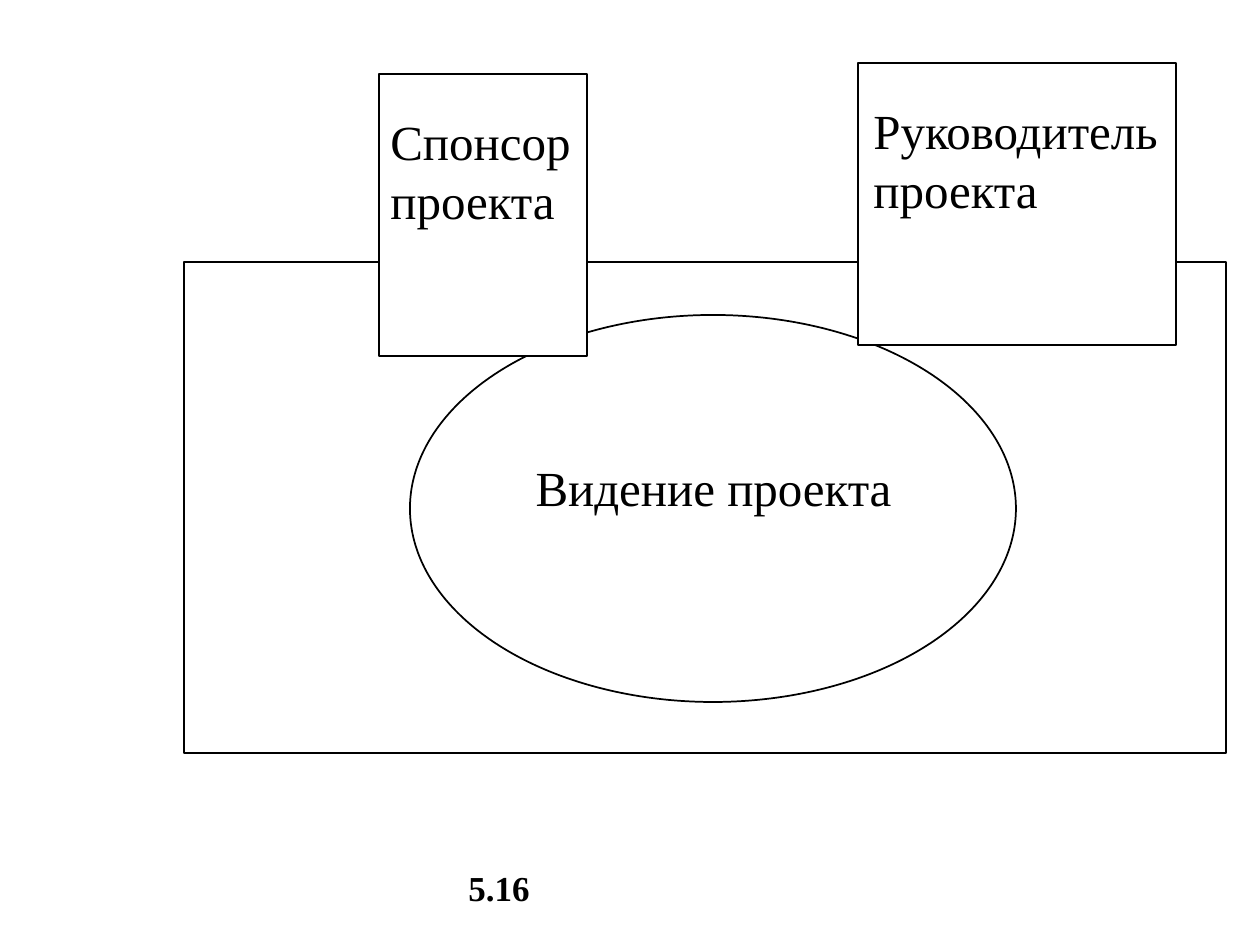
from dataclasses import dataclass

from pptx import Presentation
from pptx.dml.color import RGBColor
from pptx.enum.shapes import MSO_SHAPE as Kind
from pptx.enum.text import MSO_ANCHOR as Anchor, PP_ALIGN as Align
from pptx.util import Emu, Pt


def px(n):
    return Emu(round(n * 914400 / 126))


@dataclass(frozen=True)
class Theme:
    font: str = "Times New Roman"
    ink: RGBColor = RGBColor(0, 0, 0)
    paper: RGBColor = RGBColor(255, 255, 255)
    label: int = 28
    note: int = 20
    line: int = 1


class Board:
    """Holds the theme and the slide being drawn."""

    def __init__(self, slide, theme):
        self.slide = slide
        self.theme = theme

    def group(self):
        return self.slide.shapes.add_group_shape().shapes

    def shape(self, kind, box, home=None):
        home = home or self.slide.shapes
        item = home.add_shape(kind, *map(px, box))
        item.shadow.inherit = False
        item.fill.solid()
        item.fill.fore_color.rgb = self.theme.paper
        item.line.color.rgb = self.theme.ink
        item.line.width = Pt(self.theme.line)

    def text(self, words, box, home=None, size=None, bold=False,
             align=Align.LEFT, anchor=Anchor.TOP, before=0):
        home = home or self.slide.shapes
        frame = home.add_textbox(*map(px, box)).text_frame
        frame.word_wrap = True
        frame.vertical_anchor = anchor
        para = frame.paragraphs[0]
        para.alignment = align
        para.space_before = Pt(before)
        run = para.add_run()
        run.text = words
        font = run.font
        font.name = self.theme.font
        font.size = Pt(size or self.theme.label)
        font.bold = bold
        font.color.rgb = self.theme.ink


def main():
    deck = Presentation()
    deck.slide_width, deck.slide_height = px(1260), px(945)
    theme = Theme()
    board = Board(deck.slides.add_slide(deck.slide_layouts[6]), theme)

    board.text("5.16", (456, 872, 751, 32), size=theme.note, bold=True,
               anchor=Anchor.MIDDLE)

    vision = board.group()
    board.shape(Kind.RECTANGLE, (184, 262, 1042, 491), vision)
    board.shape(Kind.OVAL, (410, 315, 606, 387), vision)
    board.text("Видение проекта", (496, 451, 435, 130), vision,
               align=Align.CENTER, before=14)

    roles = (
        ("Спонсор проекта", (379, 74, 208, 282), (378, 105, 220, 130)),
        ("Руководитель проекта", (858, 63, 318, 282), (861, 94, 311, 131)),
    )
    for _, frame, _ in roles:
        board.shape(Kind.RECTANGLE, frame)
    for words, _, area in roles:
        board.text(words, area, before=14)

    deck.save("out.pptx")


if __name__ == "__main__":
    main()
